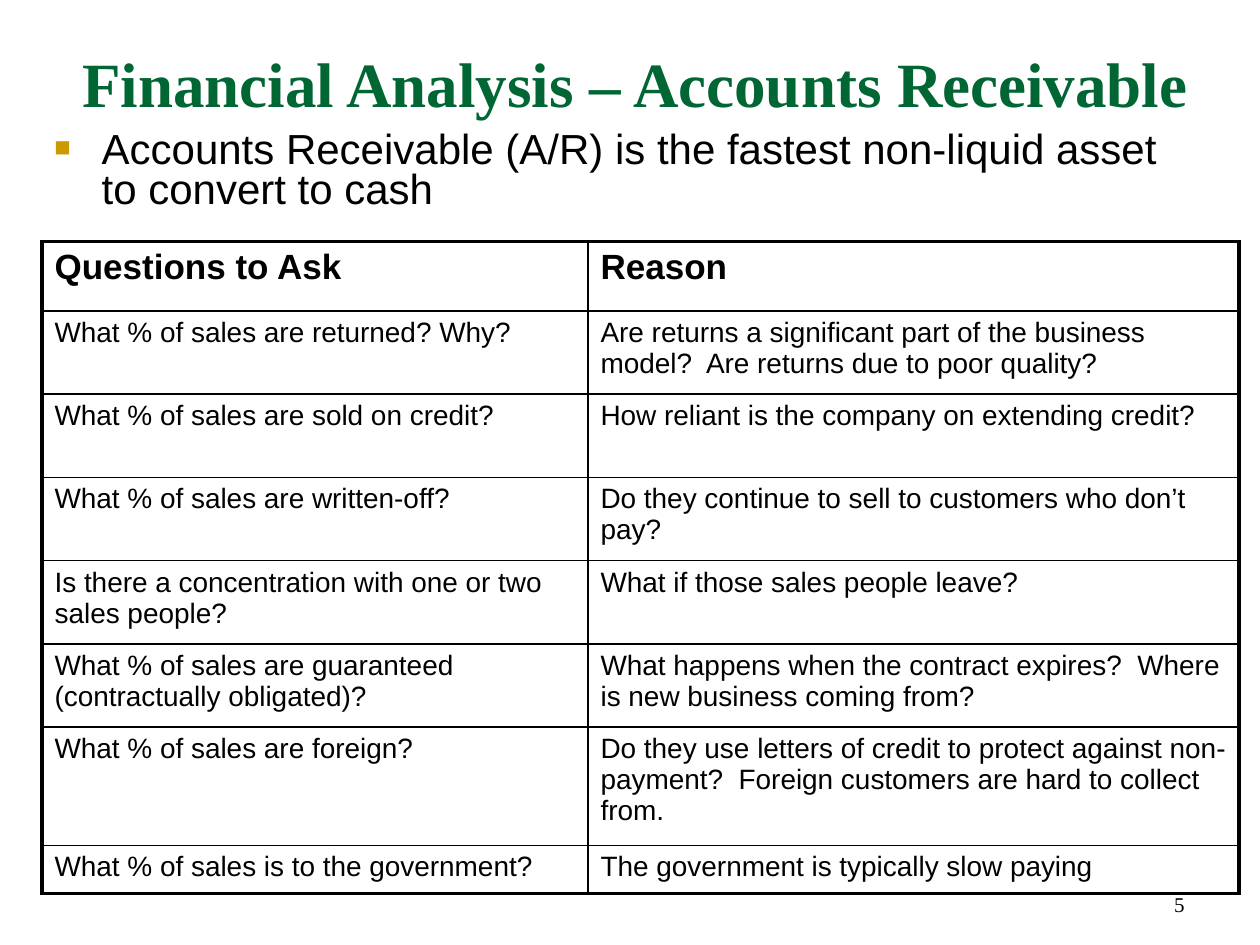
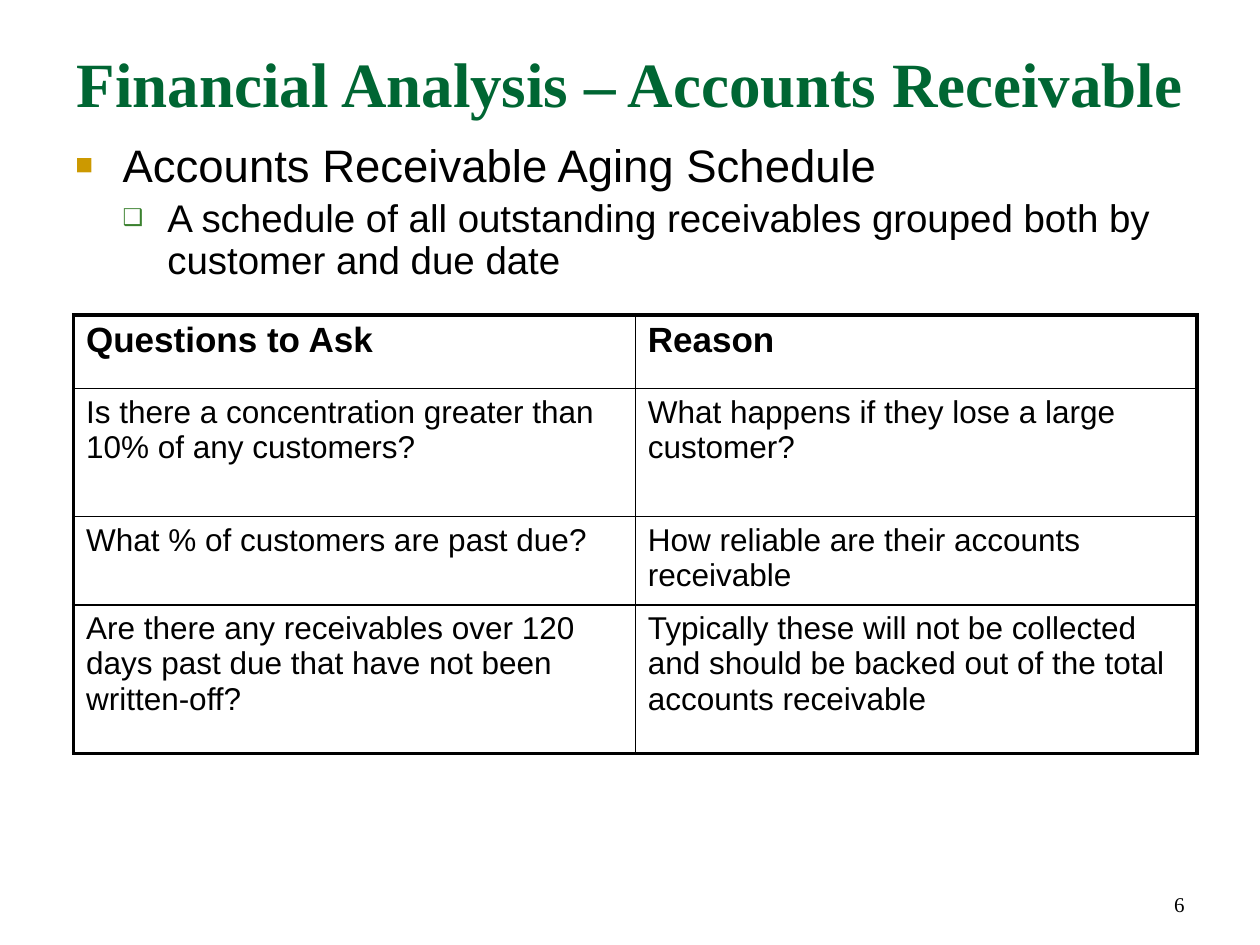
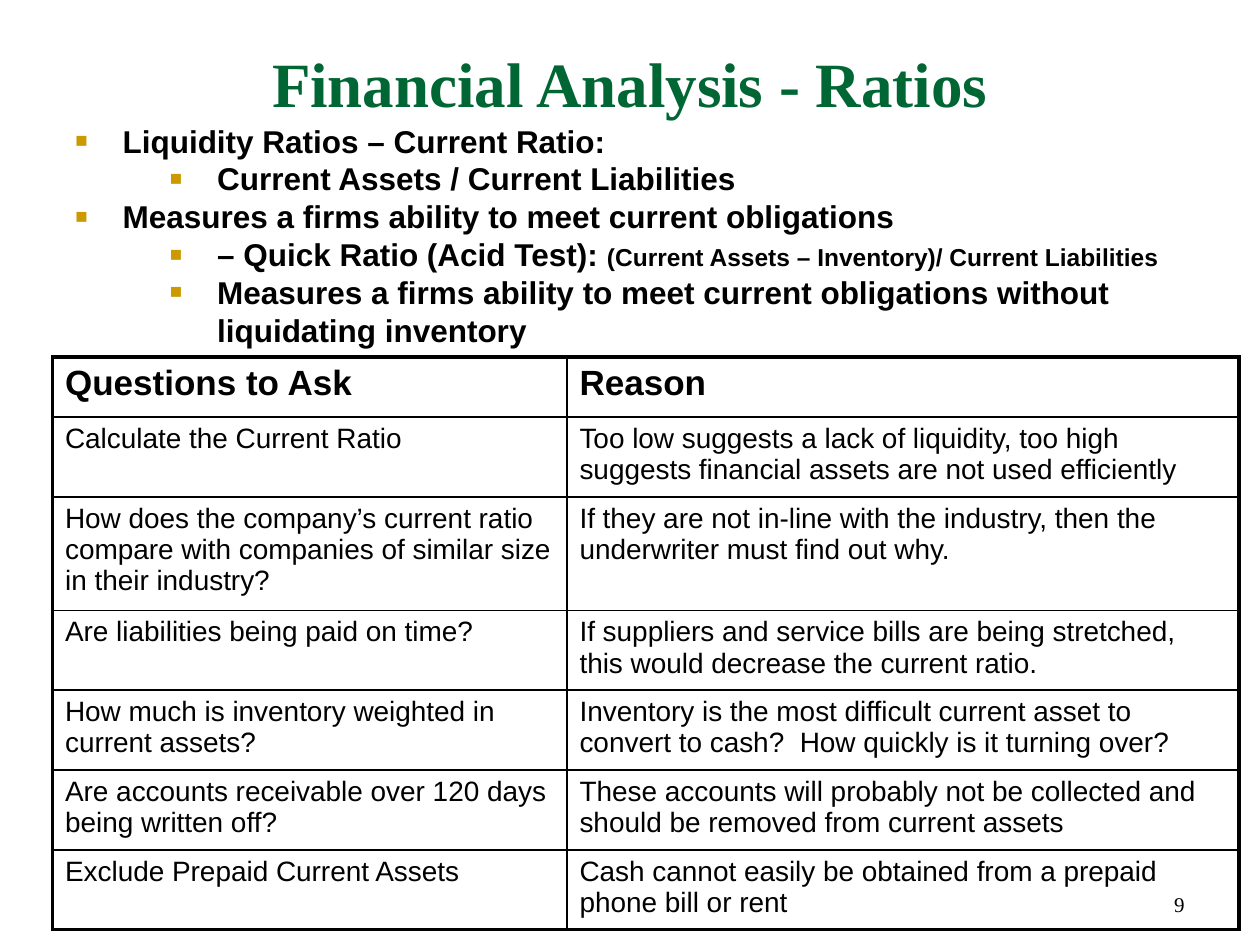
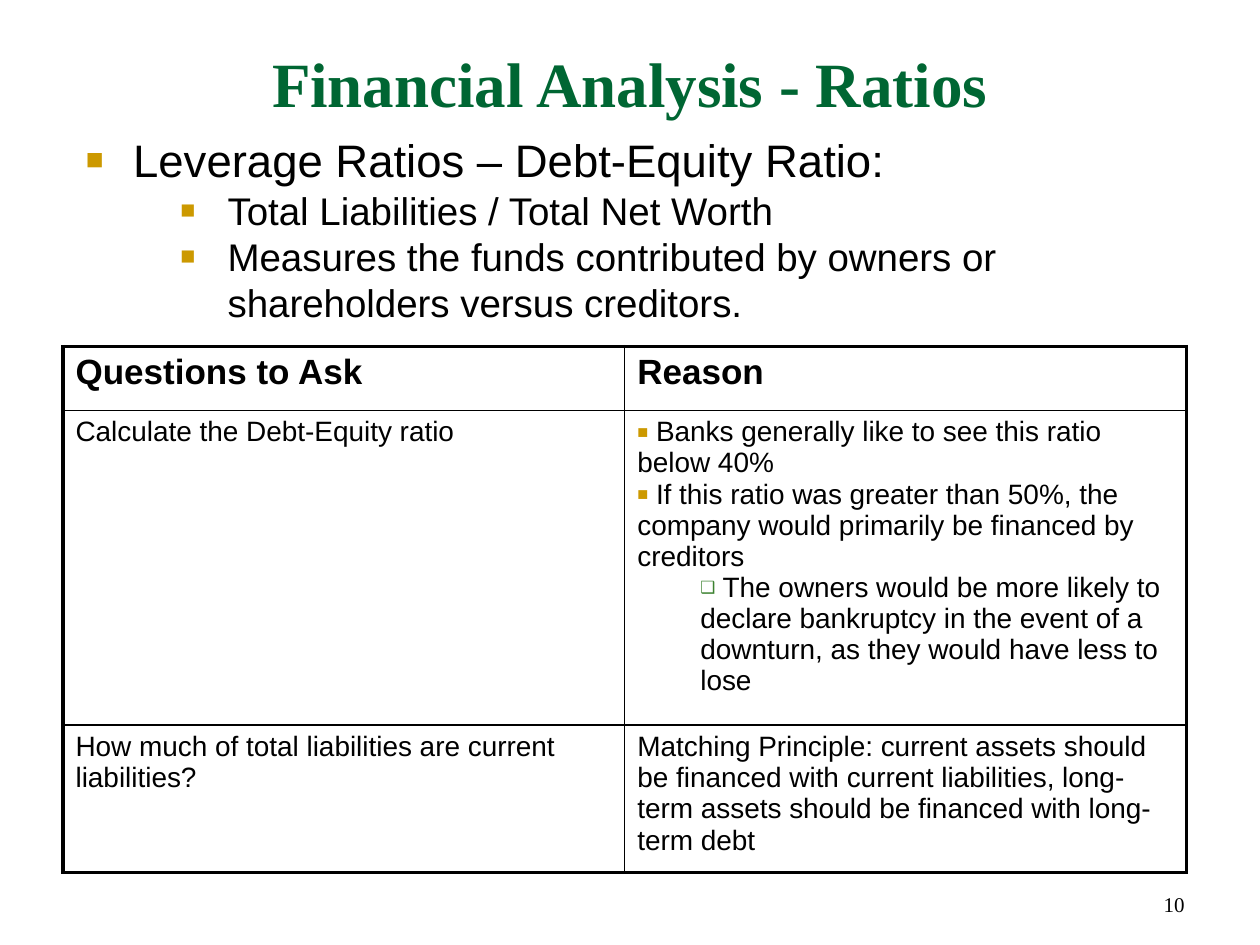
from dataclasses import dataclass

from lxml import etree
from pptx import Presentation
from pptx.dml.color import RGBColor
from pptx.enum import text as t
from pptx.oxml import ns
from pptx.util import Pt


@dataclass(frozen=True)
class Theme:
    heading_font: str = "Times New Roman"
    body_font: str = "Arial"
    ink: str = "000000"
    green: str = "006633"
    gold: str = "CC9900"
    leaf: str = "3B812F"
    title_size: float = 36
    header_size: float = 20
    number_size: float = 12
    inner_line: float = 1
    outer_line: float = 2.25


THEME = Theme()


@dataclass(frozen=True)
class Box:
    left: float
    top: float
    width: float
    height: float

    def lengths(self) -> list[Pt]:
        return [Pt(n) for n in (self.left, self.top, self.width, self.height)]


@dataclass(frozen=True)
class Bullet:
    char: str
    color: str
    percent: int


SQUARE = Bullet("■", THEME.gold, 65)
HOLLOW = Bullet("❑", THEME.leaf, 60)


@dataclass(frozen=True)
class Phrase:
    text: str
    size: float
    bold: bool = False


@dataclass(frozen=True)
class Point:
    phrases: list[Phrase]
    bullet: Bullet | None = None
    level: int = 0
    left: float = 0
    hanging: float = 0
    spacing: float | None = None
    before: float = 0


@dataclass(frozen=True)
class Questions:
    left: float
    top: float
    widths: list[float]
    heights: list[float]
    size: float
    rows: list[tuple[str, str | list[Point]]]


@dataclass(frozen=True)
class Page:
    number: int
    title: str
    title_box: Box
    body_box: Box
    points: list[Point]
    questions: Questions


def main_point(text: str, size: float, spacing: float, bold: bool = False) -> Point:
    return Point([Phrase(text, size, bold)], SQUARE, 0, 27, 27, spacing)


def detail(phrases: list[Phrase], spacing: float) -> Point:
    return Point(phrases, SQUARE, 2, 81, 27, spacing)


def add_run(paragraph, phrase: Phrase, font: str, color: str) -> None:
    run = paragraph.add_run()
    run.text = phrase.text
    run.font.name = font
    run.font.size = Pt(phrase.size)
    run.font.bold = phrase.bold
    run.font.color.rgb = RGBColor.from_string(color)


def add_bullet(properties, bullet: Bullet) -> None:
    color = etree.SubElement(properties, ns.qn("a:buClr"))
    etree.SubElement(color, ns.qn("a:srgbClr"), val=bullet.color)
    etree.SubElement(properties, ns.qn("a:buSzPct"), val=str(bullet.percent * 1000))
    etree.SubElement(properties, ns.qn("a:buFont"), typeface=THEME.body_font)
    etree.SubElement(properties, ns.qn("a:buChar"), char=bullet.char)


def write_points(frame, points: list[Point]) -> None:
    for index, point in enumerate(points):
        paragraph = frame.add_paragraph() if index else frame.paragraphs[0]
        paragraph.level = point.level
        if point.bullet:
            properties = paragraph._p.get_or_add_pPr()
            properties.set("marL", str(Pt(point.left)))
            properties.set("indent", str(-Pt(point.hanging)))
            add_bullet(properties, point.bullet)
        if point.spacing:
            paragraph.line_spacing = point.spacing
        if index and point.before:
            paragraph.space_before = Pt(point.before)
        for phrase in point.phrases:
            add_run(paragraph, phrase, THEME.body_font, THEME.ink)


def set_borders(cell, widths: dict[str, float]) -> None:
    properties = cell._tc.get_or_add_tcPr()
    for side, width in widths.items():
        line = etree.SubElement(properties, ns.qn(f"a:ln{side}"), w=str(Pt(width)))
        fill = etree.SubElement(line, ns.qn("a:solidFill"))
        etree.SubElement(fill, ns.qn("a:srgbClr"), val=THEME.ink)


def add_questions(slide, questions: Questions) -> None:
    header = [[Point([Phrase(text, THEME.header_size, True)])]
              for text in ("Questions to Ask", "Reason")]
    rows = [header] + [
        [[Point([Phrase(entry, questions.size)])] if isinstance(entry, str) else entry
         for entry in row]
        for row in questions.rows
    ]
    box = Box(questions.left, questions.top, sum(questions.widths), sum(questions.heights))
    table = slide.shapes.add_table(len(rows), 2, *box.lengths()).table
    table.first_row = table.horz_banding = False
    for column, width in zip(table.columns, questions.widths):
        column.width = Pt(width)
    for row, height in zip(table.rows, questions.heights):
        row.height = Pt(height)
    for r, row in enumerate(rows):
        for c, points in enumerate(row):
            cell = table.cell(r, c)
            write_points(cell.text_frame, points)
            outer = {"L": c == 0, "R": c == 1, "T": r == 0, "B": r == len(rows) - 1}
            set_borders(cell, {side: THEME.outer_line if edge else THEME.inner_line
                               for side, edge in outer.items()})
            cell.fill.background()


def add_text_box(slide, box: Box):
    frame = slide.shapes.add_textbox(*box.lengths()).text_frame
    frame.word_wrap = True
    return frame


def add_number(slide, number: int) -> None:
    frame = add_text_box(slide, Box(570, 510, 114, 17.3))
    frame.vertical_anchor = t.MSO_ANCHOR.BOTTOM
    paragraph = frame.paragraphs[0]
    paragraph.alignment = t.PP_ALIGN.RIGHT
    add_run(paragraph, Phrase(str(number), THEME.number_size), THEME.heading_font, THEME.ink)


def set_title(slide, title: str, box: Box) -> None:
    heading = slide.shapes.title
    heading.left, heading.top, heading.width, heading.height = box.lengths()
    frame = heading.text_frame
    frame.word_wrap = True
    frame.auto_size = t.MSO_AUTO_SIZE.NONE
    frame.vertical_anchor = t.MSO_ANCHOR.TOP
    paragraph = frame.paragraphs[0]
    paragraph.alignment = t.PP_ALIGN.CENTER
    add_run(paragraph, Phrase(title, THEME.title_size, True), THEME.heading_font, THEME.green)


RECEIVABLE = "Financial Analysis – Accounts Receivable"
RATIOS = "Financial Analysis - Ratios"
TITLE_BOX = Box(36, 21.6, 648, 90)

PAGES = [
    Page(
        5, RECEIVABLE, Box(24, 21.6, 678, 90), Box(24, 72, 648, 48),
        [main_point("Accounts Receivable (A/R) is the fastest non-liquid asset "
                    "to convert to cash", 24, 0.8)],
        Questions(24, 138, [312, 372], [39.6, *[47.6] * 5, 67.5, 27.4], 16, [
            ("What % of sales are returned? Why?",
             "Are returns a significant part of the business model?  "
             "Are returns due to poor quality?"),
            ("What % of sales are sold on credit?",
             "How reliant is the company on extending credit?"),
            ("What % of sales are written-off?",
             "Do they continue to sell to customers who don’t pay?"),
            ("Is there a concentration with one or two sales people?",
             "What if those sales people leave?"),
            ("What % of sales are guaranteed (contractually obligated)?",
             "What happens when the contract expires?  "
             "Where is new business coming from?"),
            ("What % of sales are foreign?",
             "Do they use letters of credit to protect against non-payment?  "
             "Foreign customers are hard to collect from."),
            ("What % of sales is to the government?",
             "The government is typically slow paying"),
        ]),
    ),
    Page(
        6, RECEIVABLE, TITLE_BOX, Box(36, 78, 648, 356),
        [main_point("Accounts Receivable Aging Schedule", 26, 0.9),
         Point([Phrase("A schedule of all outstanding receivables grouped both by "
                       "customer and due date", 22)], HOLLOW, 1, 52.6, 25.6, 0.9, 4.4)],
        Questions(42, 180, [321, 321], [42, 73.2, 50.4, 85], 18, [
            ("Is there a concentration greater than 10% of any customers?",
             "What happens if they lose a large customer?"),
            ("What % of customers are past due?",
             "How reliable are their accounts receivable"),
            ("Are there any receivables over 120 days past due that have not been "
             "written-off?",
             "Typically these will not be collected and should be backed out of the "
             "total accounts receivable"),
        ]),
    ),
    Page(
        9, RATIOS, TITLE_BOX, Box(36, 66, 666, 150),
        [main_point("Liquidity Ratios – Current Ratio:", 18, 1, True),
         detail([Phrase("Current Assets / Current Liabilities", 18, True)], 1),
         main_point("Measures a firms ability to meet current obligations", 18, 1, True),
         detail([Phrase("– Quick Ratio (Acid Test): ", 18, True),
                 Phrase("(Current Assets – Inventory)/ Current Liabilities", 14, True)], 1),
         detail([Phrase("Measures a firms ability to meet current obligations without "
                        "liquidating inventory", 18, True)], 1)],
        Questions(30, 204, [294, 384], [34.4, 45.6, 64.8, *[45.6] * 4], 16, [
            ("Calculate the Current Ratio",
             "Too low suggests a lack of liquidity, too high suggests financial assets "
             "are not used efficiently"),
            ("How does the company’s current ratio compare with companies of similar "
             "size in their industry?",
             "If they are not in-line with the industry, then the underwriter must "
             "find out why."),
            ("Are liabilities being paid on time?",
             "If suppliers and service bills are being stretched, this would decrease "
             "the current ratio."),
            ("How much is inventory weighted in current assets?",
             "Inventory is the most difficult current asset to convert to cash?  "
             "How quickly is it turning over?"),
            ("Are accounts receivable over 120 days being written off?",
             "These accounts will probably not be collected and should be removed from "
             "current assets"),
            ("Exclude Prepaid Current Assets",
             "Cash cannot easily be obtained from a prepaid phone bill or rent"),
        ]),
    ),
    Page(
        10, RATIOS, TITLE_BOX, Box(42, 72, 642, 192),
        [main_point("Leverage Ratios – Debt-Equity Ratio:", 26, 1),
         detail([Phrase("Total Liabilities / Total Net Worth", 22)], 1),
         detail([Phrase("Measures the funds contributed by owners or shareholders "
                        "versus creditors.", 22)], 1)],
        Questions(36, 198, [321, 321], [36.5, 167, 78], 16, [
            ("Calculate the Debt-Equity ratio", [
                Point([Phrase(" Banks generally like to see this ratio below 40%", 16)],
                      SQUARE),
                Point([Phrase(" If this ratio was greater than 50%, the company would "
                              "primarily be financed by creditors", 16)], SQUARE),
                Point([Phrase(" The owners would be more likely to declare bankruptcy in "
                              "the event of a downturn, as they would have less to lose",
                              16)], HOLLOW, 1, 36),
            ]),
            ("How much of total liabilities are current liabilities?",
             "Matching Principle: current assets should be financed with current "
             "liabilities, long-term assets should be financed with long-term debt"),
        ]),
    ),
]


def main() -> None:
    deck = Presentation()
    deck.slide_width, deck.slide_height = Pt(720), Pt(540)
    for page in PAGES:
        slide = deck.slides.add_slide(deck.slide_layouts[5])
        add_number(slide, page.number)
        set_title(slide, page.title, page.title_box)
        write_points(add_text_box(slide, page.body_box), page.points)
        add_questions(slide, page.questions)
    deck.save("out.pptx")


if __name__ == "__main__":
    main()
